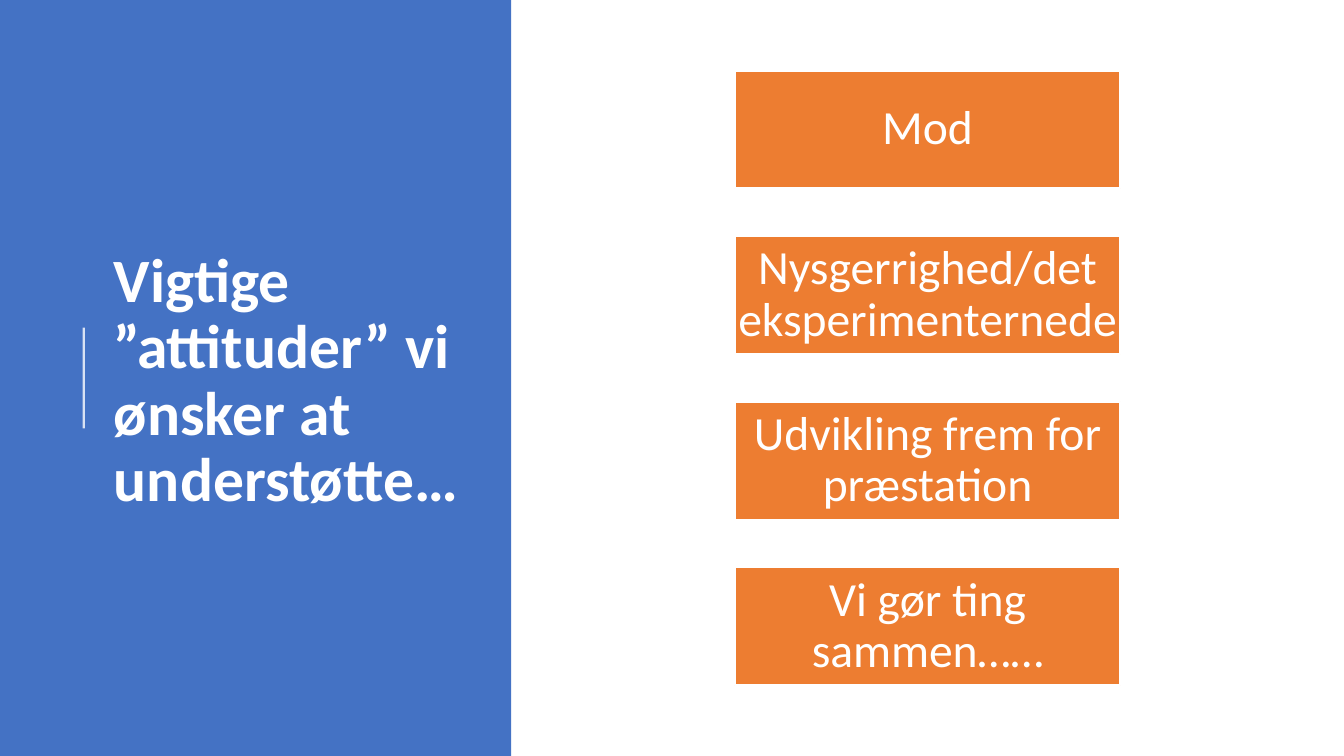
"""Build a slide with a title panel and a column of four attitudes."""
from dataclasses import dataclass

from lxml import etree
from pptx import Presentation, util as u
from pptx.dml.color import RGBColor
from pptx.enum import shapes as sh, text as tx
from pptx.oxml.ns import qn

WIDE, HIGH = u.Inches(13.33), u.Inches(7.5)
WHITE, BLUE, ORANGE = "FFFFFF", "4472C4", "ED7D31"
TOP, STEP = 9.33, 21.91
WORDS = (
    "Mod",
    "Nysgerrighed/det eksperimenternede",
    "Udvikling frem for præstation",
    "Vi gør ting sammen……",
)


@dataclass(frozen=True)
class Area:
    """Hold a rectangle in percent of the slide's size."""
    left: float
    top: float
    width: float
    height: float

    def emu(self) -> tuple[int, int, int, int]:
        """Return left, top, width and height as lengths."""
        return (int(WIDE * self.left / 100), int(HIGH * self.top / 100),
                int(WIDE * self.width / 100), int(HIGH * self.height / 100))


@dataclass(frozen=True)
class Card:
    """Describe one filled box with its wording."""
    label: str
    area: Area


def paint(form, tint: str) -> None:
    """Set a fill or font colour from a hex string."""
    form.rgb = RGBColor.from_string(tint)


def block(slide, area: Area, tint: str):
    """Draw a plain filled rectangle."""
    box = slide.shapes.add_shape(sh.MSO_SHAPE.RECTANGLE, *area.emu())
    box.shadow.inherit = False
    box.fill.solid()
    paint(box.fill.fore_color, tint)
    box.line.fill.background()
    return box


def write(frame, words: str, size: int, align, bold: bool = False) -> None:
    """Fill a text frame with one formatted paragraph."""
    frame.text = words
    frame.word_wrap = True
    frame.auto_size = tx.MSO_AUTO_SIZE.NONE
    frame.vertical_anchor = tx.MSO_ANCHOR.MIDDLE
    para = frame.paragraphs[0]
    para.alignment = align
    para.line_spacing = 0.9
    for run in para.runs:
        run.font.name = "Calibri"
        run.font.size = u.Pt(size)
        run.font.bold = bold
        paint(run.font.color, WHITE)


def head(slide, words: str) -> None:
    """Place the title on its blue panel."""
    title = slide.shapes.title
    panel = block(slide, Area(0, 0, 38.03, 100), BLUE)
    title.element.addprevious(panel.element)
    title.left, title.top, title.width, title.height = Area(
        7.73, 10.4, 27.68, 80.27).emu()
    write(title.text_frame, words, 44, tx.PP_ALIGN.LEFT, True)


def rule(slide, area: Area) -> None:
    """Draw the pale upright line beside the title."""
    left, top, width, height = area.emu()
    line = slide.shapes.add_connector(
        sh.MSO_CONNECTOR.STRAIGHT, left, top + height, left + width, top)
    line.line.width = u.Pt(1.5)
    paint(line.line.color, WHITE)
    props = line.element.spPr
    tint = props.find(".//" + qn("a:srgbClr"))
    etree.SubElement(tint, qn("a:alpha"), val="80000")
    etree.SubElement(props, qn("a:effectLst"))


def draw(slide, card: Card) -> None:
    """Draw one orange card with centred words."""
    box = block(slide, card.area, ORANGE)
    box.line.width = u.Pt(1.5)
    box.line.fill.solid()
    paint(box.line.color, WHITE)
    frame = box.text_frame
    frame.margin_left = frame.margin_right = u.Inches(0.02)
    frame.margin_top = frame.margin_bottom = u.Inches(0.02)
    write(frame, card.label, 34, tx.PP_ALIGN.CENTER)


def main() -> None:
    """Build and save the slide."""
    deck = Presentation()
    deck.slide_width, deck.slide_height = WIDE, HIGH
    slide = deck.slides.add_slide(deck.slide_layouts.get_by_name("Title Only"))
    head(slide, "Vigtige ”attituder” vi ønsker at understøtte…")
    rule(slide, Area(6.23, 43.33, 0, 13.33))
    for row, label in enumerate(WORDS):
        draw(slide, Card(label, Area(54.69, TOP + row * STEP, 28.66, 15.6)))
    deck.save("out.pptx")


if __name__ == "__main__":
    main()
